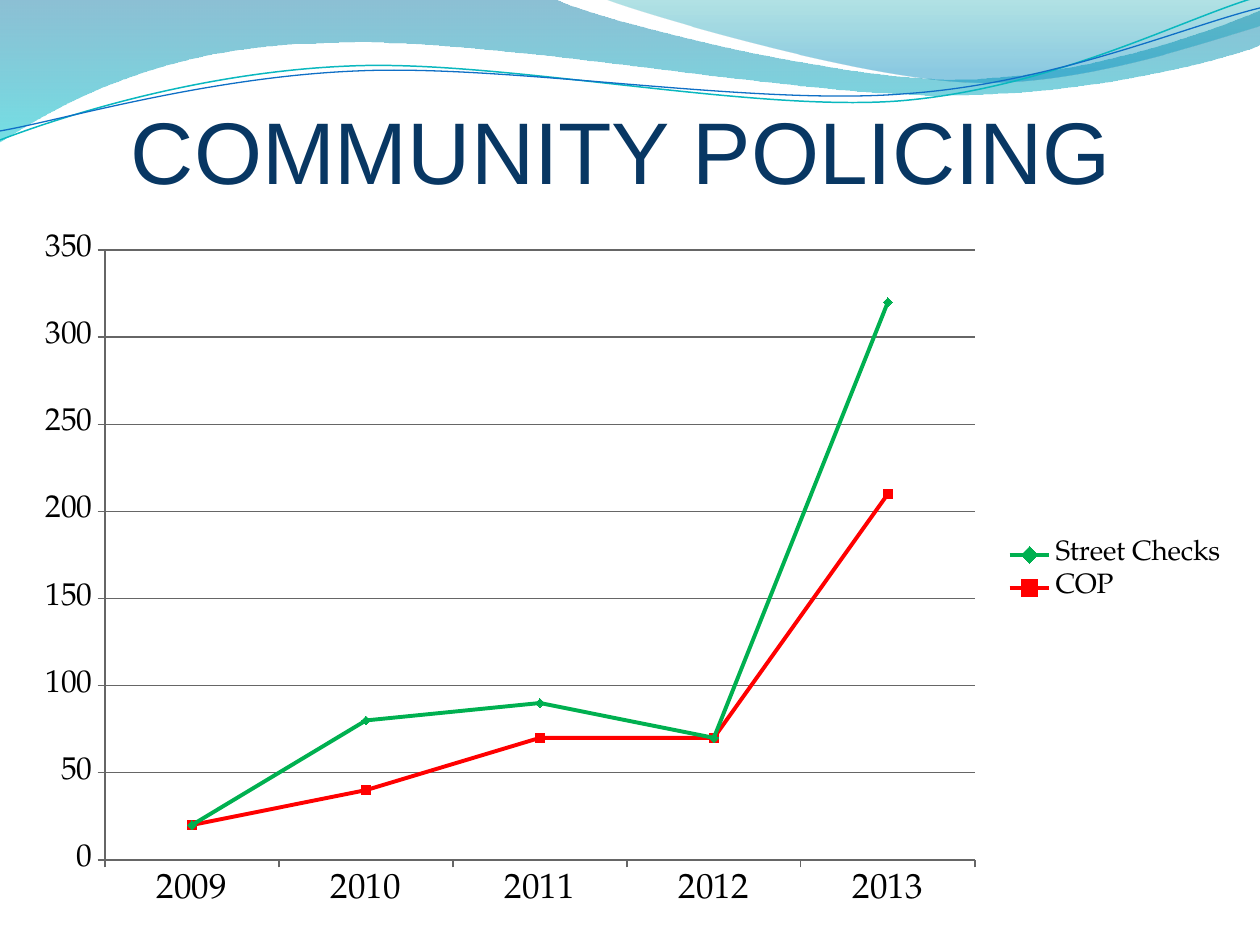
from lxml.etree import SubElement
from pptx import Presentation
from pptx.chart.data import CategoryChartData
from pptx.dml.color import RGBColor
from pptx.enum.chart import XL_CHART_TYPE, XL_LEGEND_POSITION, XL_MARKER_STYLE, XL_TICK_MARK
from pptx.enum.text import MSO_ANCHOR, MSO_AUTO_SIZE, PP_ALIGN
from pptx.oxml import parse_xml
from pptx.oxml.ns import nsdecls, qn
from pptx.util import Pt

EMU_PER_PX = 914400 / 126
CHART_FONT = "TeX Gyre Pagella"
AXIS_GREY = "666666"
CHART_BOX = (21, 220, 1219, 703)
PLOT_BOX = (105, 250, 870, 610)

# Each outline is a start point, then lines (x, y) or Bezier curves (two controls and an end).
LARGE_WAVE = [
    (0, 0), (554, -1), (600, 21, 837, 79, 955, 79), (1075, 79, 1207, 33, 1260, 11),
    (1261, 45), (1239, 55, 1096, 96, 940, 95), (784, 95, 481, 35, 324, 43),
    (163, 45, 58, 105, -1, 142), (0, 0),
]
SMALL_WAVE = [(604, -1), (641, 14, 859, 78, 969, 82), (1079, 87, 1211, 40, 1260, 26),
              (1260, 0), (604, -1)]
TEAL_CURVE = [(0, 140), (60, 117, 199, 72, 349, 66), (498, 59, 747, 112, 898, 101),
              (1050, 89, 1182, 19, 1257, -3)]
BLUE_CURVE = [(0, 131), (59, 121, 207, 77, 357, 71), (508, 64, 751, 106, 903, 94),
              (1053, 84, 1186, 26, 1260, 8)]

YEARS = ["2009", "2010", "2011", "2012", "2013"]
SERIES = [
    ("COP", (20, 40, 70, 70, 210), "FF0000", XL_MARKER_STYLE.SQUARE),
    ("Street Checks", (0, 40, 20, 0, 110), "00B050", XL_MARKER_STYLE.DIAMOND),
]


def px(length):
    return round(length * EMU_PER_PX)


def color(hex_string):
    return RGBColor.from_string(hex_string)


def style_line(line, hex_string, width):
    line.color.rgb = color(hex_string)
    line.width = Pt(width)


def style_font(font, size, hex_string, name):
    font.size = Pt(size)
    font.name = name
    font.color.rgb = color(hex_string)


def add_outline(slide, outline, close):
    """Lay down all points as lines, then merge each curve's three into one Bezier."""
    start, *segments = outline
    points = [pair for segment in segments for pair in zip(segment[::2], segment[1::2])]
    builder = slide.shapes.build_freeform(*start, scale=EMU_PER_PX)
    builder.add_line_segments(points, close=close)
    shape = builder.convert_to_shape()
    shape.shadow.inherit = False
    lines = iter(list(shape.element.iter(qn("a:lnTo"))))
    for segment in segments:
        line = next(lines)
        if len(segment) == 6:
            line.tag = qn("a:cubicBezTo")
            for _ in range(2):
                extra = next(lines)
                line.append(extra[0])
                extra.getparent().remove(extra)
    return shape


def add_wave(slide, outline, stops):
    """Add a vertical gradient area; stops hold position, colour and opacity in percent."""
    shape = add_outline(slide, outline, close=True)
    shape.line.fill.background()
    shape.fill.gradient()
    shape.fill.gradient_angle = 270
    for stop, (position, hex_string, _) in zip(shape.fill.gradient_stops, stops):
        stop.position = position / 100
        stop.color.rgb = color(hex_string)
    for node, (_, _, opacity) in zip(shape.element.iter(qn("a:srgbClr")), stops):
        SubElement(node, qn("a:alpha"), val=str(opacity * 1000))


def add_curve(slide, outline, hex_string, width):
    shape = add_outline(slide, outline, close=False)
    shape.fill.background()
    style_line(shape.line, hex_string, width)


def set_title(slide, text):
    title = slide.shapes.title
    title.left, title.top, title.width, title.height = map(px, (2, 84, 1239, 118))
    slide.shapes.element.append(title.element)  # in front of the waves
    frame = title.text_frame
    frame.text = text
    frame.word_wrap = True
    frame.auto_size = MSO_AUTO_SIZE.NONE
    frame.vertical_anchor = MSO_ANCHOR.BOTTOM
    frame.margin_left = frame.margin_right = frame.margin_bottom = 0
    frame.margin_top = px(6)
    paragraph = frame.paragraphs[0]
    paragraph.alignment = PP_ALIGN.CENTER
    style_font(paragraph.runs[0].font, 50, "083763", "Arial")


def style_axis(axis, size):
    axis.major_tick_mark = XL_TICK_MARK.OUTSIDE
    axis.minor_tick_mark = XL_TICK_MARK.NONE
    style_font(axis.tick_labels.font, size, "000000", CHART_FONT)
    style_line(axis.format.line, AXIS_GREY, 0.75)


def set_plot_area(chart):
    """Fix the inner plot area, in fractions of the chart."""
    left, top, width, height = CHART_BOX
    plot_left, plot_top, plot_width, plot_height = PLOT_BOX
    plot_area = chart.element.find(".//" + qn("c:plotArea"))
    for layout in plot_area.findall(qn("c:layout")):
        plot_area.remove(layout)
    plot_area.insert(0, parse_xml(
        f'<c:layout {nsdecls("c")}><c:manualLayout><c:layoutTarget val="inner"/>'
        '<c:xMode val="edge"/><c:yMode val="edge"/>'
        f'<c:x val="{(plot_left - left) / width}"/><c:y val="{(plot_top - top) / height}"/>'
        f'<c:w val="{plot_width / width}"/><c:h val="{plot_height / height}"/>'
        '</c:manualLayout></c:layout>'))


def add_line_chart(slide):
    data = CategoryChartData()
    data.categories = YEARS
    for name, values, _, _ in SERIES:
        data.add_series(name, values)
    chart = slide.shapes.add_chart(
        XL_CHART_TYPE.LINE_MARKERS_STACKED, *map(px, CHART_BOX), data).chart
    chart.has_title = False
    style_font(chart.font, 10, "000000", CHART_FONT)
    set_plot_area(chart)

    style_axis(chart.category_axis, 20)
    style_axis(chart.value_axis, 18)
    chart.value_axis.minimum_scale = 0
    chart.value_axis.maximum_scale = 350
    chart.value_axis.major_unit = 50
    chart.value_axis.has_major_gridlines = True
    style_line(chart.value_axis.major_gridlines.format.line, AXIS_GREY, 0.75)

    chart.has_legend = True
    chart.legend.position = XL_LEGEND_POSITION.RIGHT
    chart.legend.include_in_layout = False
    style_font(chart.legend.font, 16, "000000", CHART_FONT)

    plot = chart.plots[0]
    plot.vary_by_categories = False
    for series, (_, _, hex_string, marker_style) in zip(plot.series, SERIES):
        series.smooth = False
        series.format.line.color.rgb = color(hex_string)
        series.marker.style = marker_style
        series.marker.size = 5
        series.marker.format.fill.solid()
        series.marker.format.fill.fore_color.rgb = color(hex_string)
        series.marker.format.line.color.rgb = color(hex_string)


def main():
    presentation = Presentation()
    presentation.slide_width, presentation.slide_height = px(1260), px(945)
    slide = presentation.slides.add_slide(presentation.slide_layouts.get_by_name("Title Only"))
    add_wave(slide, LARGE_WAVE, [(0, "0074A1", 45), (100, "00C6CF", 55)])
    add_wave(slide, SMALL_WAVE, [(0, "00A1A9", 30), (80, "008BBF", 45)])
    add_curve(slide, TEAL_CURVE, "0AB8BF", 0.85)
    add_curve(slide, BLUE_CURVE, "0F6FC6", 0.75)
    set_title(slide, "COMMUNITY POLICING")
    add_line_chart(slide)
    presentation.save("out.pptx")


if __name__ == "__main__":
    main()
